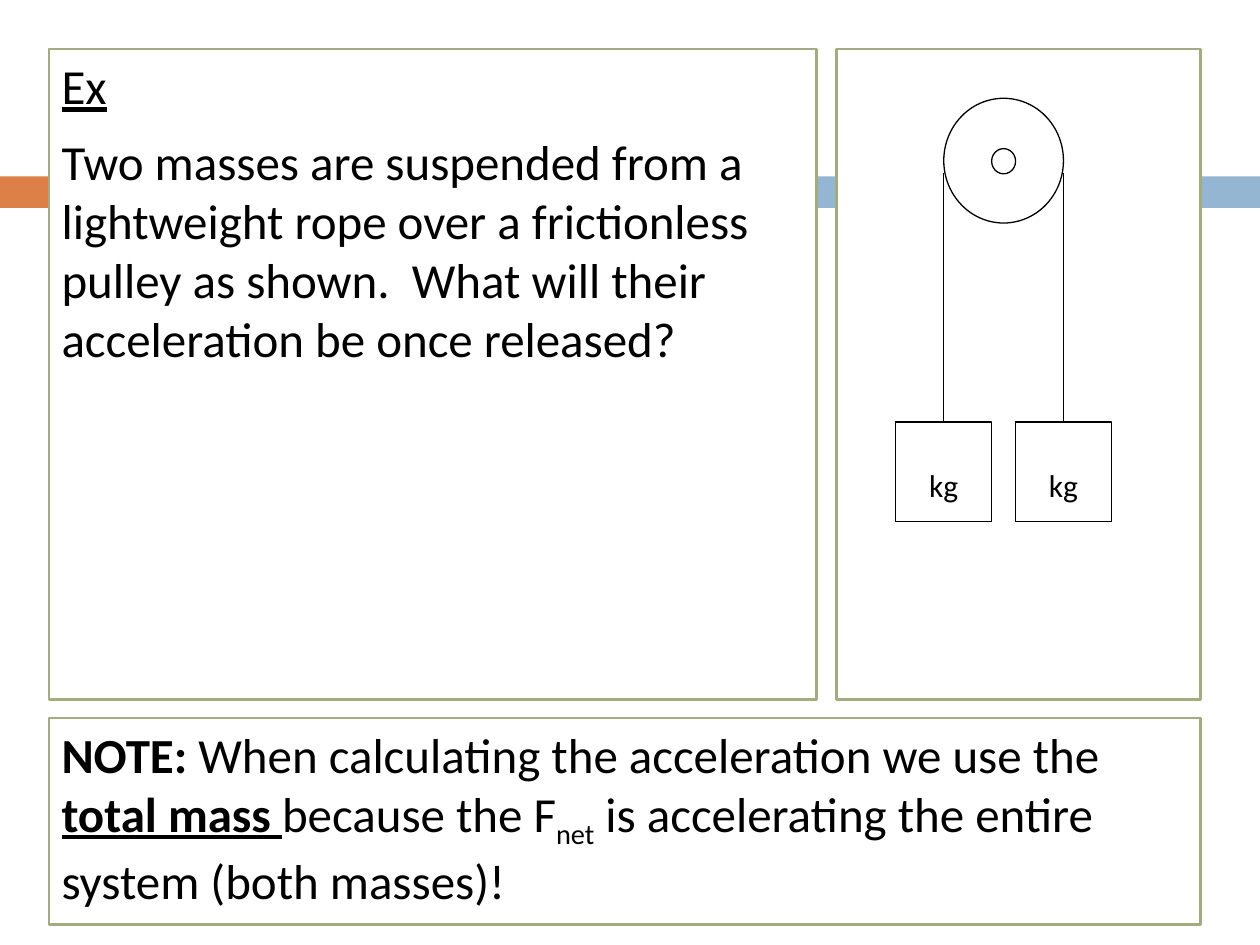
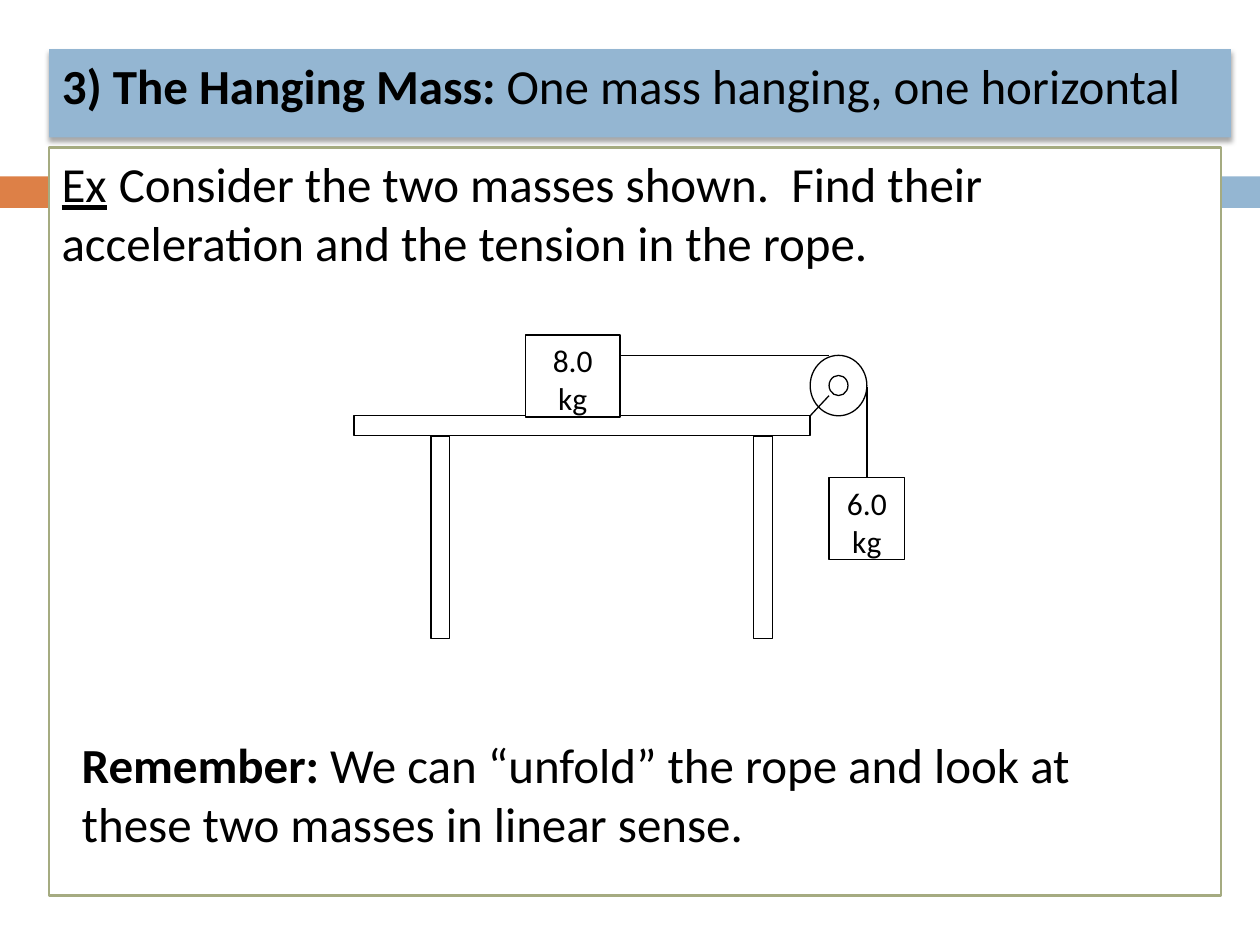
from lxml import etree
from pptx import Presentation
from pptx.dml.color import RGBColor
from pptx.enum.shapes import MSO_CONNECTOR, MSO_SHAPE
from pptx.enum.text import MSO_ANCHOR, MSO_AUTO_SIZE, PP_ALIGN
from pptx.oxml.ns import qn
from pptx.util import Inches, Pt

RECT, OVAL = MSO_SHAPE.RECTANGLE, MSO_SHAPE.OVAL
STRAIGHT = MSO_CONNECTOR.STRAIGHT
TOP = MSO_ANCHOR.TOP
LEFT, CENTER = PP_ALIGN.LEFT, PP_ALIGN.CENTER
NO_FIT = MSO_AUTO_SIZE.NONE
TITLE_ONLY, BLANK = 5, 6
TOP_SIDE = 0

BLACK, WHITE = "000000", "FFFFFF"
ORANGE, BLUE, SAGE = "DD8047", "94B6D2", "A5AB81"
BODY_FONT, SPACE_FONT = "Calibri", "Times New Roman"
BODY_SIZE, LABEL_SIZE = 28, 18
MARGIN = 0.39


def color(hex_value):
    return RGBColor.from_string(hex_value)


def add_span(para, text, size=BODY_SIZE, font=BODY_FONT, bold=False,
             underline=False, baseline=None):
    span = para.add_run()
    span.text = text
    span.font.size = Pt(size)
    span.font.name = font
    span.font.bold = bold
    span.font.underline = underline
    span.font.color.rgb = color(BLACK)
    if baseline:
        span.font._element.set("baseline", str(baseline * 1000))


def start_para(box, align=LEFT, first=True):
    frame = box.text_frame
    frame.word_wrap = True
    frame.auto_size = NO_FIT
    frame.vertical_anchor = TOP
    para = frame.paragraphs[0] if first else frame.add_paragraph()
    para.alignment = align
    para.space_after = Pt(10)
    return para


def add_box(shapes, kind, left, top, width, height, fill=WHITE, line=BLACK, weight=0.75):
    box = shapes.add_shape(kind, Inches(left), Inches(top), Inches(width), Inches(height))
    box.shadow.inherit = False
    box.fill.solid()
    box.fill.fore_color.rgb = color(fill)
    if line:
        box.line.color.rgb = color(line)
        box.line.width = Pt(weight)
    else:
        box.line.fill.background()
    return box


def add_panel(page, left, top, width, height):
    return add_box(page.shapes, RECT, left, top, width, height, line=SAGE, weight=1.5)


def add_mass(shapes, label, left, top, width, height, text_top=0.05):
    mass = add_box(shapes, RECT, left, top, width, height)
    mass.text_frame.margin_top = Inches(text_top)
    add_span(start_para(mass, CENTER), label, size=LABEL_SIZE)
    return mass


def add_line(shapes, x1, y1, x2, y2, mass=None):
    line = shapes.add_connector(STRAIGHT, Inches(x1), Inches(y1), Inches(x2), Inches(y2))
    line.line.color.rgb = color(BLACK)
    line.line.width = Pt(0.75)
    etree.SubElement(line._element.spPr, qn("a:effectLst"))
    if mass is not None:
        line.end_connect(mass, TOP_SIDE)


def add_page(deck, layout):
    page = deck.slides.add_slide(deck.slide_layouts[layout])
    # Two-colour band shared by all slides
    add_box(page.shapes, RECT, 0, 1.4, 0.58, 0.25, fill=ORANGE, line=None)
    add_box(page.shapes, RECT, 0.65, 1.4, 9.35, 0.25, fill=BLUE, line=None)
    return page


def add_soft_shadow(box):
    effects = etree.SubElement(box._element.spPr, qn("a:effectLst"))
    shadow = etree.SubElement(effects, qn("a:outerShdw"), blurRad=str(Pt(3)),
                              dist=str(Pt(2)), dir="5400000", rotWithShape="0")
    tint = etree.SubElement(shadow, qn("a:srgbClr"), val=BLACK)
    etree.SubElement(tint, qn("a:alpha"), val="35000")


def format_title(page, lead, rest):
    title = page.shapes.title
    title.left, title.top = Inches(MARGIN), Inches(MARGIN)
    title.width, title.height = Inches(9.38), Inches(0.7)
    title.fill.solid()
    title.fill.fore_color.rgb = color(BLUE)
    add_soft_shadow(title)
    para = start_para(title)
    add_span(para, lead, bold=True)
    add_span(para, rest)


def draw_pulley_pair(page):
    shapes = page.shapes.add_group_shape().shapes
    wheel_left, wheel_width = 7.49, 0.95
    mass_top, mass_width = 3.35, 0.76
    add_box(shapes, OVAL, wheel_left, 0.78, wheel_width, 0.99)
    # One rope and one mass on each side of the wheel
    for rope_x in (wheel_left, wheel_left + wheel_width):
        mass = add_mass(shapes, "kg", rope_x - mass_width / 2, mass_top,
                        mass_width, 0.79, text_top=0.35)
        add_line(shapes, rope_x, 1.37, rope_x, mass_top, mass)
    add_box(shapes, OVAL, 7.87, 1.18, 0.19, 0.2)


def draw_table_with_hanging_mass(page):
    shapes = page.shapes.add_group_shape().shapes
    # Table
    add_box(shapes, RECT, 2.81, 3.3, 3.62, 0.16)
    for leg_left in (3.42, 5.98):
        add_box(shapes, RECT, leg_left, 3.46, 0.15, 1.61)
    # Pulley and its bracket
    add_box(shapes, OVAL, 6.43, 2.82, 0.45, 0.48)
    add_line(shapes, 6.43, 3.3, 6.58, 3.14)
    add_box(shapes, OVAL, 6.58, 2.98, 0.15, 0.16)
    # Masses and rope
    add_mass(shapes, "8.0 kg", 4.17, 2.66, 0.75, 0.65)
    hanging_mass = add_mass(shapes, "6.0 kg", 6.58, 3.79, 0.6, 0.65)
    add_line(shapes, 6.58, 2.82, 4.92, 2.82)
    add_line(shapes, 6.88, 3.07, 6.88, 3.79, hanging_mass)


def build_two_masses(deck):
    page = add_page(deck, BLANK)
    add_panel(page, 6.64, MARGIN, 2.89, 5.16)
    question = add_panel(page, MARGIN, MARGIN, 6.09, 5.16)
    add_span(start_para(question), "Ex", underline=True)
    add_span(start_para(question, first=False),
             "Two masses are suspended from a lightweight rope over a frictionless "
             "pulley as shown.  What will their acceleration be once released?")
    draw_pulley_pair(page)

    note = start_para(add_panel(page, MARGIN, 5.7, 9.14, 1.64))
    add_span(note, "NOTE:", bold=True)
    add_span(note, " When calculating the acceleration we use the ")
    add_span(note, "total mass ", bold=True, underline=True)
    add_span(note, "because the F")
    add_span(note, "net", baseline=-25)
    add_span(note, " is accelerating the entire system (both masses)!")


def build_hanging_mass(deck):
    page = add_page(deck, TITLE_ONLY)
    format_title(page, "3) The Hanging Mass:", " One mass hanging, one horizontal")
    question = start_para(add_panel(page, MARGIN, 1.17, 9.3, 5.94))
    add_span(question, "Ex", underline=True)
    add_span(question, " ", font=SPACE_FONT)
    add_span(question, "Consider the two masses shown.  Find their acceleration "
                       "and the tension in the rope.")
    draw_table_with_hanging_mass(page)

    reminder = page.shapes.add_textbox(Inches(0.55), Inches(5.78), Inches(8.91), Inches(1.09))
    para = start_para(reminder)
    add_span(para, "Remember:", bold=True)
    add_span(para, " We can “unfold” the rope and look at these two masses in linear sense.")


def main():
    deck = Presentation()
    deck.slide_width, deck.slide_height = Inches(10), Inches(7.5)
    build_two_masses(deck)
    build_hanging_mass(deck)
    deck.save("out.pptx")


if __name__ == "__main__":
    main()
